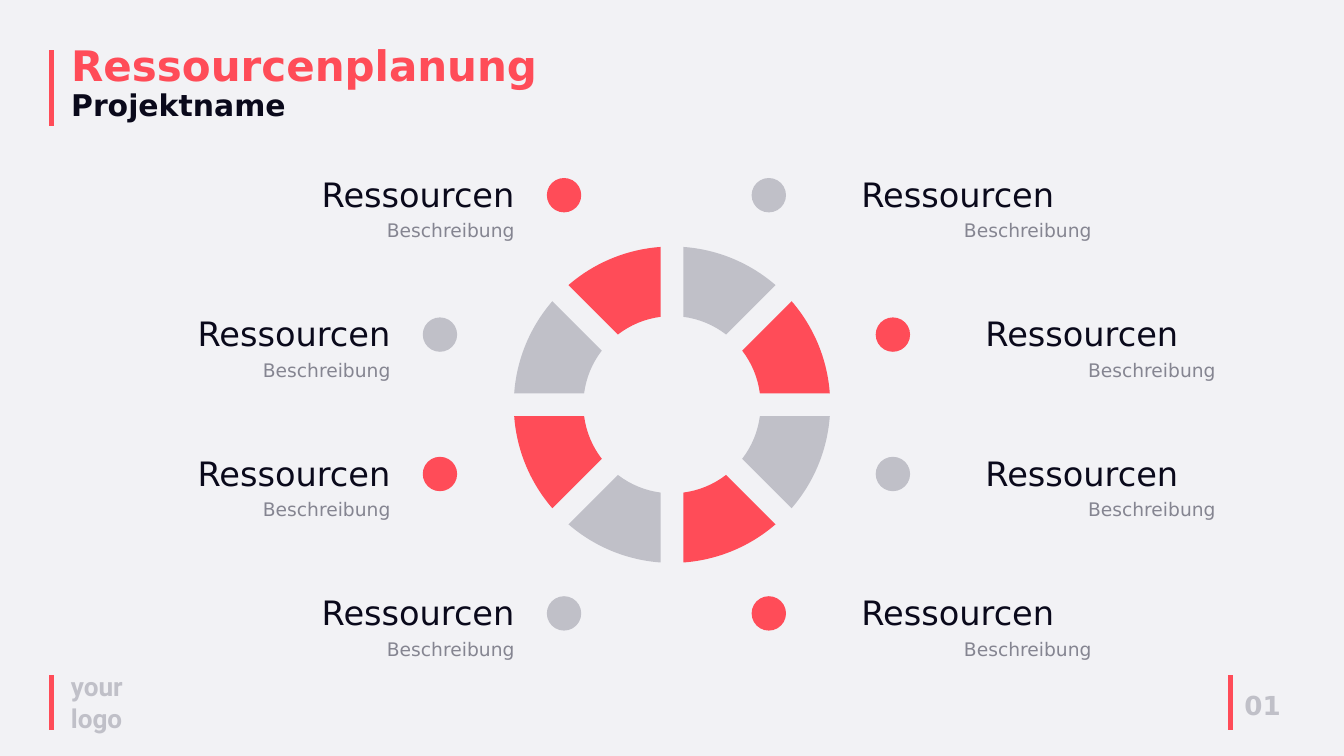
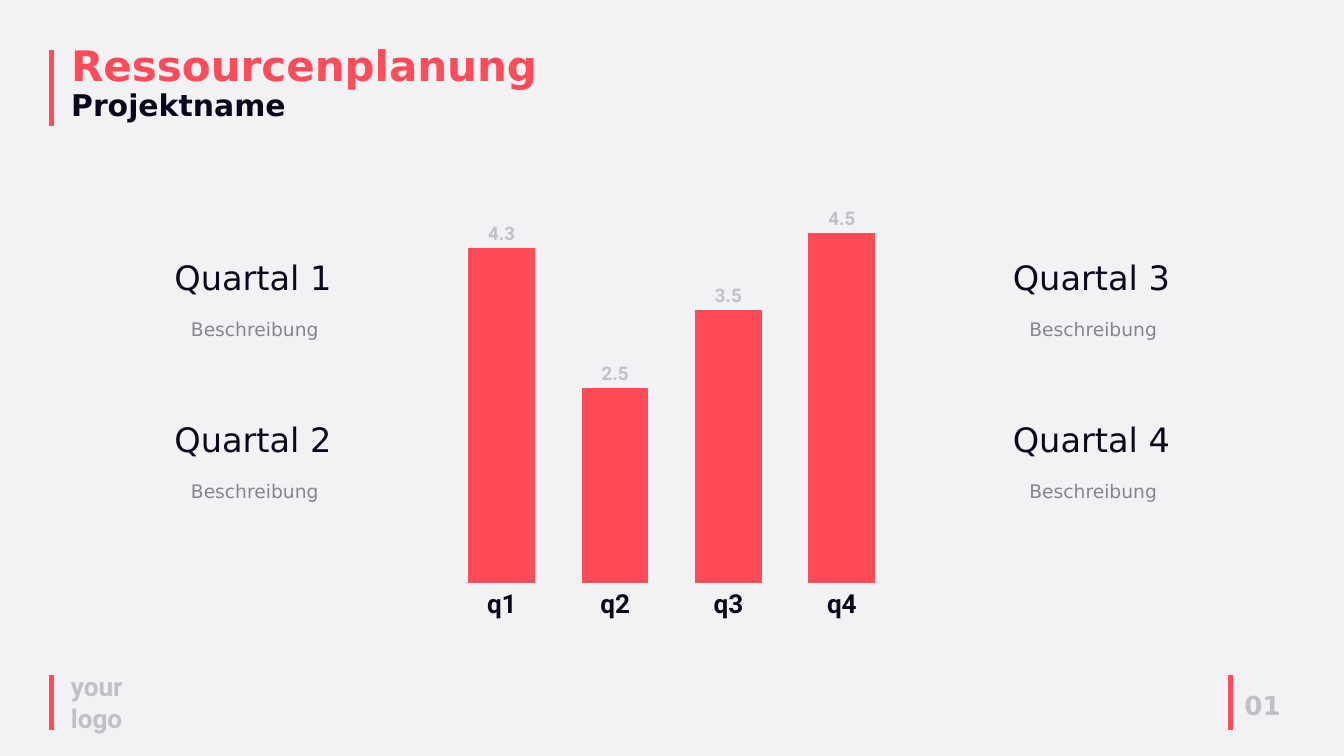
from math import asin, cos, pi, sin, tan

from lxml import etree
from pptx import Presentation
from pptx import util as u
from pptx.chart import data as chart_data
from pptx.dml.color import RGBColor
from pptx.enum import chart as chart_enum, shapes, text
from pptx.oxml import ns

COLORS = {
    "paper": "F2F2F5",
    "accent": "FF4C58",
    "silver": "C0C0C8",
    "ink": "0A091B",
    "slate": "858591",
}
SANS, ROBOTO = "DejaVu Sans", "Roboto"
STYLES = {
    "title": {"name": SANS, "size": u.Pt(45), "bold": True, "color": "accent"},
    "subtitle": {"name": SANS, "size": u.Pt(32), "bold": True, "color": "ink"},
    "logo": {"name": ROBOTO, "size": u.Pt(28), "bold": True, "color": "silver"},
    "page": {"name": SANS, "size": u.Pt(28), "bold": True, "color": "silver"},
    "heading": {"name": SANS, "size": u.Pt(36), "color": "ink"},
    "description": {"name": SANS, "size": u.Pt(20), "color": "slate"},
    "chart": {"name": ROBOTO, "size": u.Pt(10), "color": "ink"},
    "category": {"name": ROBOTO, "size": u.Pt(28), "bold": True, "color": "ink"},
    "value": {"name": ROBOTO, "size": u.Pt(20), "bold": True, "color": "silver"},
}
LEFT, CENTER, RIGHT = text.PP_ALIGN.LEFT, text.PP_ALIGN.CENTER, text.PP_ALIGN.RIGHT
HEADING_HEIGHT, DESCRIPTION_HEIGHT = 1.8, 1.12


def rgb(color):
    return RGBColor.from_string(COLORS[color])


def cm(*lengths):
    return [u.Cm(length) for length in lengths]


def style_font(font, style):
    for name, value in STYLES[style].items():
        if name == "color":
            font.color.rgb = rgb(value)
        else:
            setattr(font, name, value)


def paint(shape, color):
    """Fill a shape with one colour, without outline or shadow."""
    shape.fill.solid()
    shape.fill.fore_color.rgb = rgb(color)
    shape.line.fill.background()
    shape.shadow.inherit = False


def write(shape, lines, align=LEFT, anchor=text.MSO_ANCHOR.TOP, spacing=None):
    """Put (words, style) lines into one paragraph, with breaks between them."""
    frame = shape.text_frame
    frame.word_wrap = True
    frame.auto_size = text.MSO_AUTO_SIZE.SHAPE_TO_FIT_TEXT
    frame.vertical_anchor = anchor
    para = frame.paragraphs[0]
    para.alignment = align
    para.line_spacing = spacing
    for index, (words, style) in enumerate(lines):
        if index:
            para.add_line_break()
        span = para.add_run()
        span.text = words
        style_font(span.font, style)


def add_text(parent, area, words, style, align=LEFT):
    box = parent.shapes.add_textbox(*cm(*area))
    write(box, [(words, style)], align)


def add_bar(slide, x, top, bottom):
    bar = slide.shapes.add_connector(
        shapes.MSO_CONNECTOR.STRAIGHT, *cm(x, top, x, bottom))
    bar.line.color.rgb = rgb("accent")
    bar.line.width = u.Pt(5)
    etree.SubElement(bar._element.spPr, ns.qn("a:effectLst"))


def add_page(deck, title_width):
    """Add a slide with the shared background, title, bars and footer."""
    slide = deck.slides.add_slide(deck.slide_layouts[6])
    slide.background.fill.solid()
    slide.background.fill.fore_color.rgb = rgb("paper")
    add_bar(slide, 1.95, 1.9, 4.77)
    for x in (1.95, 46.51):
        add_bar(slide, x, 25.53, 27.58)
    add_text(slide, (2.43, 25.23, 3.02, 2.64), "your logo", "logo")
    title = slide.shapes.add_textbox(*cm(2.44, 1.57, title_width, 3.23))
    write(title, [("Ressourcenplanung", "title"), ("Projektname", "subtitle")],
          anchor=text.MSO_ANCHOR.MIDDLE, spacing=0.9)
    add_text(slide, (46.79, 25.93, 4.83, 1.45), "01", "page")
    return slide


def ring_point(radius, angle):
    return u.Cm(25.4 + radius * cos(angle)), u.Cm(15.3 + radius * sin(angle))


def arc(radius, first, last):
    """The four Bézier points of a circular arc."""
    bend = 4 / 3 * tan((last - first) / 4)
    reach = radius * (1 + bend ** 2) ** 0.5
    turn = pi / 2 - asin(radius / reach) if bend > 0 else asin(radius / reach) - pi / 2
    return [ring_point(radius, first), ring_point(reach, first + turn),
            ring_point(reach, last - turn), ring_point(radius, last)]


def curve_side(shape, side, points):
    """Replace a straight side of a freeform with a Bézier curve."""
    curve = etree.Element(ns.qn("a:cubicBezTo"))
    for x, y in points:
        etree.SubElement(curve, ns.qn("a:pt"), x=str(x - shape.left), y=str(y - shape.top))
    side.getparent().replace(side, curve)


def add_segment(ring, start, end, color, outer=5.98, inner=3.35, half_gap=0.43):
    """Draw the part of the ring between two spokes, inset by half_gap."""
    outer_trim, inner_trim = asin(half_gap / outer), asin(half_gap / inner)
    outside = arc(outer, start + outer_trim, end - outer_trim)
    inside = arc(inner, end - inner_trim, start + inner_trim)
    builder = ring.shapes.build_freeform(*inside[-1])
    builder.add_line_segments([outside[0], outside[-1], inside[0], inside[-1]], close=True)
    segment = builder.convert_to_shape()
    paint(segment, color)
    sides = list(segment._element.iter(ns.qn("a:lnTo")))
    curve_side(segment, sides[1], outside[1:])
    curve_side(segment, sides[3], inside[1:])


def add_ring(slide, count=8):
    ring = slide.shapes.add_group_shape()
    for index in range(count):
        start, end = (2 * pi * spoke / count for spoke in (index, index + 1))
        add_segment(ring, start, end, "accent" if index % 2 else "silver")


def add_resource(slide, dot_left, top, color, on_left):
    group = slide.shapes.add_group_shape()
    dot = group.shapes.add_shape(
        shapes.MSO_SHAPE.OVAL, *cm(dot_left, top + 0.28, 1.3, 1.3))
    paint(dot, color)
    for words, style, width, height, drop in (
            ("Ressourcen", "heading", 9, HEADING_HEIGHT, 0),
            ("Beschreibung", "description", 10.41, DESCRIPTION_HEIGHT, 1.71)):
        left = dot_left - 0.97 - width if on_left else dot_left + 2.69
        add_text(group, (left, top + drop, width, height), words, style, RIGHT)


def add_quarter(slide, name, left, top):
    group = slide.shapes.add_group_shape()
    heading = group.shapes.add_shape(
        shapes.MSO_SHAPE.RECTANGLE, *cm(left, top, 8.15, HEADING_HEIGHT))
    paint(heading, "paper")
    write(heading, [(name, "heading")], CENTER)
    add_text(group, (left + 0.15, top + 2.3, 7.98, DESCRIPTION_HEIGHT),
             "Beschreibung", "description", CENTER)


def place_plot(chart, **percents):
    """Fix the inner plot area in percent of the chart."""
    plot_area = chart._chartSpace.find(".//" + ns.qn("c:plotArea"))
    for old in plot_area.findall(ns.qn("c:layout")):
        plot_area.remove(old)
    layout = etree.Element(ns.qn("c:layout"))
    plot_area.insert(0, layout)
    manual = etree.SubElement(layout, ns.qn("c:manualLayout"))
    settings = {"layoutTarget": "inner", "xMode": "edge", "yMode": "edge"}
    settings.update((name, value / 100) for name, value in percents.items())
    for name, value in settings.items():
        etree.SubElement(manual, ns.qn("c:" + name), val=str(value))


def add_quarter_chart(slide):
    figures = chart_data.CategoryChartData()
    figures.categories = ["q1", "q2", "q3", "q4"]
    figures.add_series("Series 1", (4.3, 2.5, 3.5, 4.5))
    chart = slide.shapes.add_chart(
        chart_enum.XL_CHART_TYPE.COLUMN_CLUSTERED,
        *cm(16.43, 6.45, 17.91, 18.52), figures).chart
    chart.has_legend = chart.has_title = False
    style_font(chart.font, "chart")
    place_plot(chart, x=2.2, y=4.7, w=95.7, h=79.5)

    plot = chart.plots[0]
    plot.vary_by_categories = False
    plot.gap_width, plot.overlap = 70, -27
    columns = plot.series[0].format.fill
    columns.solid()
    columns.fore_color.rgb = rgb("accent")
    plot.has_data_labels = True
    labels = plot.data_labels
    labels.show_value = True
    labels.position = chart_enum.XL_LABEL_POSITION.OUTSIDE_END
    style_font(labels.font, "value")

    category_axis, value_axis = chart.category_axis, chart.value_axis
    style_font(category_axis.tick_labels.font, "category")
    category_axis.format.line.fill.background()
    value_axis.minimum_scale, value_axis.maximum_scale = 0, 5
    value_axis.has_major_gridlines = False
    value_axis.visible = False


def build_ring_page(deck):
    slide = add_page(deck, 18.24)
    add_ring(slide)
    for row in range(4):
        top = 6.45 + 5.27 * row
        shift = 4.69 if row in (1, 2) else 0
        colors = ("silver", "accent") if row % 2 else ("accent", "silver")
        add_resource(slide, 20.67 - shift, top, colors[0], True)
        add_resource(slide, 28.41 + shift, top, colors[1], False)


def build_chart_page(deck):
    slide = add_page(deck, 21.06)
    add_quarter_chart(slide)
    for index in range(4):
        column, row = divmod(index, 2)
        add_quarter(slide, f"Quartal {index + 1}", 5.49 + 31.69 * column, 9.58 + 6.15 * row)


def main():
    deck = Presentation()
    deck.slide_width, deck.slide_height = cm(50.8, 28.58)
    build_ring_page(deck)
    build_chart_page(deck)
    deck.save("out.pptx")


if __name__ == "__main__":
    main()
